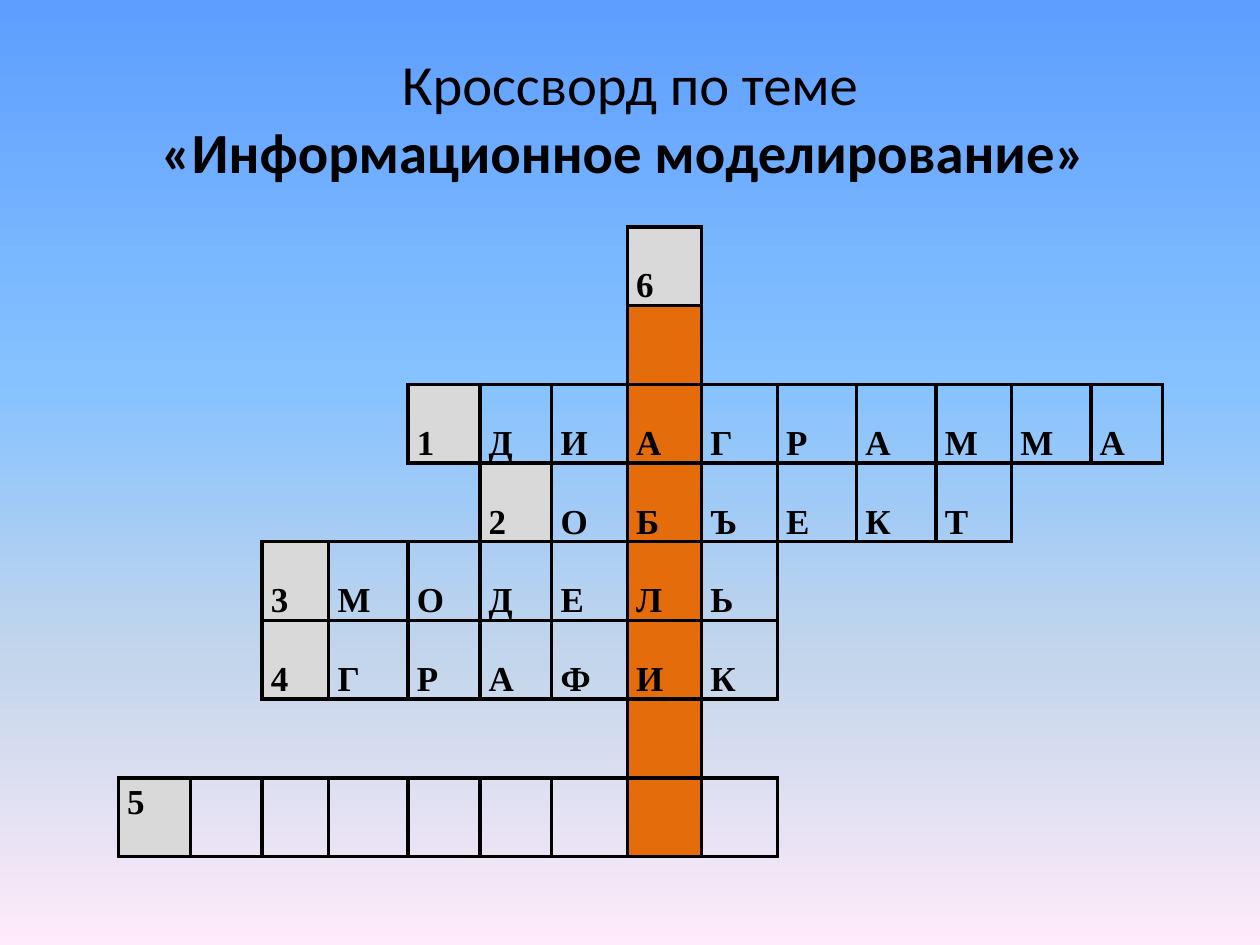
from dataclasses import dataclass

from lxml.etree import SubElement as Sub
from pptx import Presentation
from pptx.dml.color import RGBColor as RGB
from pptx.enum.text import MSO_ANCHOR as Anchor, PP_ALIGN as Align
from pptx.oxml.ns import qn
from pptx.util import Inches, Pt


@dataclass(frozen=True)
class Theme:
    ink: str = "000000"
    clue: str = "D9D9D9"
    key: str = "E46C0A"
    sky: tuple = ((0, "5E9EFF"), (40, "85C2FF"), (70, "C4D6EB"), (100, "FFEBFA"))
    head: float = 32.4
    body: float = 20
    rule: float = 2.25
    sans: str = "Calibri"
    serif: str = "Times New Roman"


THEME = Theme()
NO_STYLE = "{2D5ABB26-0587-4C30-8999-92F81FD0307C}"
KEY_COL = 7
WIDTHS = (0.57, 0.57, 0.53, 0.63, 0.57, 0.57, 0.6,
          0.59, 0.6, 0.63, 0.63, 0.6, 0.63, 0.57)
# A dot is outside the puzzle, an underscore is an empty square.
GRID = (
    ".......6......",
    "......._......",
    "....1ДИАГРАММА",
    ".....2ОБЪЕКТ..",
    "..3МОДЕЛЬ.....",
    "..4ГРАФИК.....",
    "......._......",
    "5________.....",
)
SIDES = (("a:lnL", 0, -1), ("a:lnR", 0, 1), ("a:lnT", -1, 0), ("a:lnB", 1, 0))


def style(run, size, face, bold):
    font = run.font
    font.size, font.name, font.bold = Pt(size), face, bold
    font.color.rgb = RGB.from_string(THEME.ink)


def paint_back(slide):
    fill = slide.background.fill
    fill.gradient()
    fill.gradient_angle = 270
    stops = next(slide.element.iter(qn("a:gsLst")))
    for stop in list(stops):
        stops.remove(stop)
    for spot, tint in THEME.sky:
        stop = Sub(stops, qn("a:gs"), pos=str(spot * 1000))
        Sub(stop, qn("a:srgbClr"), val=tint)


def add_title(slide, box):
    frame = slide.shapes.add_textbox(*map(Inches, box)).text_frame
    frame.word_wrap = True
    frame.vertical_anchor = Anchor.MIDDLE
    # The closing space sets the second line slightly left of centre.
    frame.text = "Кроссворд по теме\n«Информационное моделирование» "
    for para, bold in zip(frame.paragraphs, (False, True)):
        para.alignment = Align.CENTER
        style(para.runs[0], THEME.head, THEME.sans, bold)


def is_live(row, col):
    inside = 0 <= row < len(GRID) and 0 <= col < len(WIDTHS)
    return inside and GRID[row][col] != "."


def rule_cell(cell, row, col):
    """Draw each side that touches a square of the puzzle."""
    props = cell._tc.get_or_add_tcPr()
    for tag, down, right in SIDES:
        if is_live(row, col) or is_live(row + down, col + right):
            line = Sub(props, qn(tag), w=str(Pt(THEME.rule)))
            fill = Sub(line, qn("a:solidFill"))
            Sub(fill, qn("a:srgbClr"), val=THEME.ink)
        else:
            Sub(Sub(props, qn(tag)), qn("a:noFill"))


def fill_cell(cell, mark, col):
    tint = THEME.clue if mark.isdigit() else THEME.key if col == KEY_COL else None
    if tint and mark != ".":
        cell.fill.solid()
        cell.fill.fore_color.rgb = RGB.from_string(tint)
    else:
        cell.fill.background()


def write_cell(cell, mark):
    cell.margin_left = cell.margin_right = Inches(0.07)
    cell.margin_top = cell.margin_bottom = 0
    cell.vertical_anchor = Anchor.TOP if mark == "5" else Anchor.BOTTOM
    cell.text = mark
    para = cell.text_frame.paragraphs[0]
    para.line_spacing = 1.15
    style(para.runs[0], THEME.body, THEME.serif, True)


def add_puzzle(slide, box):
    size = len(GRID), len(WIDTHS)
    table = slide.shapes.add_table(*size, *map(Inches, box)).table
    table.first_row = table.horz_banding = False
    next(table._tbl.iter(qn("a:tableStyleId"))).text = NO_STYLE
    for column, width in zip(table.columns, WIDTHS):
        column.width = Inches(width)
    for row, marks in enumerate(GRID):
        for col, mark in enumerate(marks):
            cell = table.cell(row, col)
            rule_cell(cell, row, col)
            fill_cell(cell, mark, col)
            if mark not in "._":
                write_cell(cell, mark)


def main():
    deck = Presentation()
    deck.slide_width, deck.slide_height = Inches(10), Inches(7.5)
    slide = deck.slides.add_slide(deck.slide_layouts[6])
    paint_back(slide)
    add_title(slide, (0.5, 0.3, 9, 1.25))
    add_puzzle(slide, (0.94, 1.8, 8.28, 5))
    deck.save("out.pptx")


if __name__ == "__main__":
    main()
